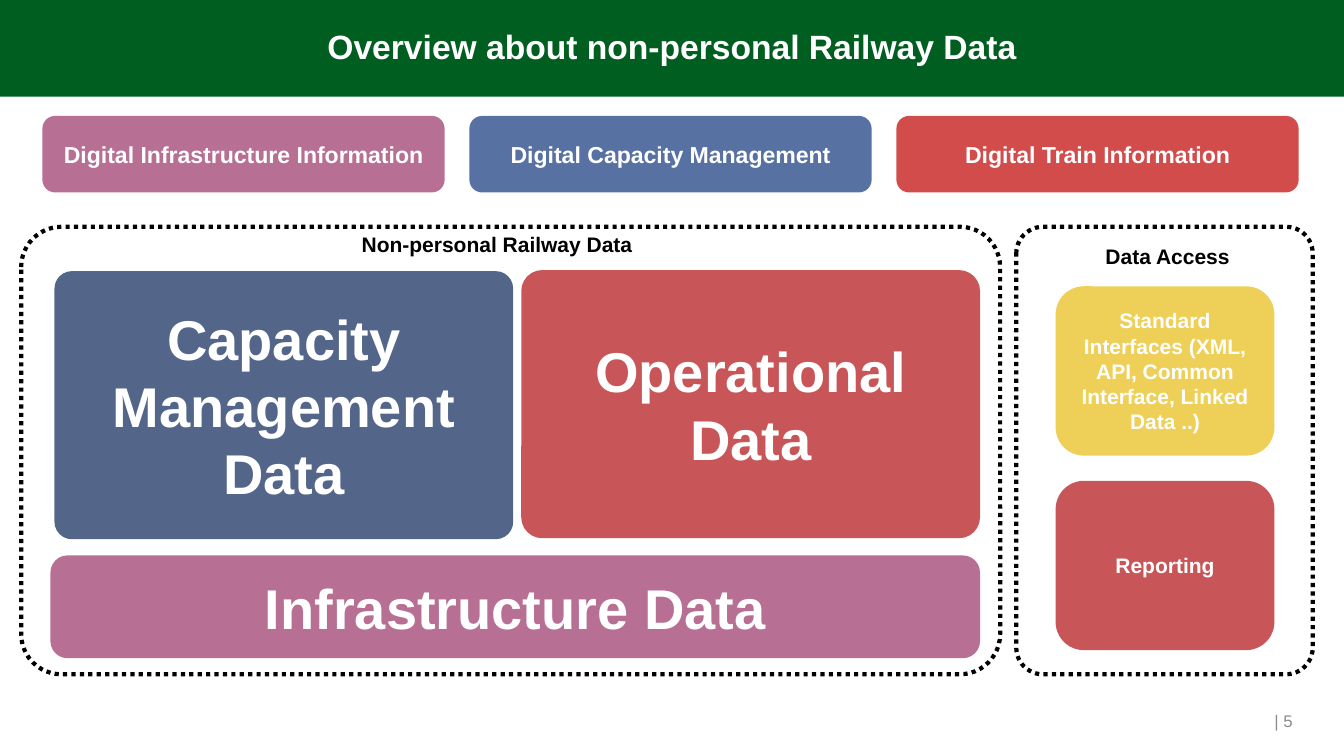
from dataclasses import dataclass

from lxml.etree import SubElement
from pptx import Presentation
from pptx.dml.color import RGBColor
from pptx.enum.dml import MSO_LINE
from pptx.enum.shapes import MSO_SHAPE
from pptx.enum.text import MSO_ANCHOR, MSO_AUTO_SIZE, PP_ALIGN
from pptx.oxml.ns import qn
from pptx.util import Inches, Pt


@dataclass(frozen=True)
class Theme:
    font: str = "Arial"
    banner: str = "005F20"
    white: str = "FFFFFF"
    black: str = "000000"
    grey: str = "8C8C8C"
    plum: str = "993366"
    blue: str = "10367D"
    navy: str = "0B2659"
    red: str = "C00000"
    crimson: str = "B20E10"
    yellow: str = "E8BC10"
    opacity: int = 70
    title: float = 24
    category: float = 16.5
    data: float = 40
    label: float = 15
    page: float = 12


T = Theme()

TITLE = "Overview about non-personal Railway Data"
PAGE = "| 5"
CATEGORIES = [
    ("Digital Infrastructure Information", T.plum),
    ("Digital Capacity Management", T.blue),
    ("Digital Train Information", T.red),
]
# text, colour, (left, top, width, height), corner ratio
DATA_BLOCKS = [
    ("Operational Data", T.crimson, (5.17, 2.68, 4.55, 2.66), 0.078),
    ("Capacity Management Data", T.navy, (0.54, 2.69, 4.55, 2.66), 0.065),
    ("Infrastructure Data", T.plum, (0.5, 5.51, 9.22, 1.02), 0.167),
]
ACCESS_BLOCKS = [
    ("Standard Interfaces (XML, API, Common Interface, Linked Data ..)", T.yellow),
    ("Reporting", T.crimson),
]
DATA_FRAME, DATA_LABEL = (0.21, 2.25, 9.71, 4.44), (3.01, 2.25, 3.84, 0.35)
ACCESS_FRAME, ACCESS_LABEL = (10.08, 2.25, 2.94, 4.44), (10.36, 2.37, 2.44, 0.35)


def rgb(code):
    return RGBColor.from_string(code)


def write(sp, text, size, color, bold=True, align=PP_ALIGN.CENTER,
          anchor=MSO_ANCHOR.MIDDLE):
    tf = sp.text_frame
    tf.text = text
    tf.word_wrap = True
    tf.auto_size = MSO_AUTO_SIZE.NONE
    tf.vertical_anchor = anchor
    p = tf.paragraphs[0]
    p.alignment = align
    font = p.runs[0].font
    font.name, font.size, font.bold = T.font, Pt(size), bold
    font.color.rgb = rgb(color)
    return p


def add_round_rect(shapes, box, corner):
    sp = shapes.add_shape(MSO_SHAPE.ROUNDED_RECTANGLE, *map(Inches, box))
    sp.adjustments[0] = corner
    sp.shadow.inherit = False
    return sp


def add_block(shapes, text, color, box, size, corner=0.167):
    """Add a translucent filled block with centred text."""
    sp = add_round_rect(shapes, box, corner)
    sp.fill.solid()
    sp.fill.fore_color.rgb = rgb(color)
    srgb = sp.fill._xPr.find(qn("a:solidFill")).find(qn("a:srgbClr"))
    SubElement(srgb, qn("a:alpha"), val=str(T.opacity * 1000))
    sp.line.fill.background()
    write(sp, text, size, T.white)


def add_frame(shapes, box, label, label_box):
    """Add a dotted frame and its heading."""
    sp = add_round_rect(shapes, box, 0.09)
    sp.fill.background()
    sp.line.color.rgb = rgb(T.black)
    sp.line.width = Pt(3)
    sp.line.dash_style = MSO_LINE.ROUND_DOT
    heading = shapes.add_textbox(*map(Inches, label_box))
    write(heading, label, T.label, T.black, anchor=MSO_ANCHOR.TOP)


def main():
    prs = Presentation()
    prs.slide_width, prs.slide_height = Inches(13.33), Inches(7.5)
    s = prs.slides.add_slide(prs.slide_layouts[5])

    title = s.shapes.title
    title.left, title.top = Inches(0), Inches(0)
    title.width, title.height = prs.slide_width, Inches(0.96)
    title.fill.solid()
    title.fill.fore_color.rgb = rgb(T.banner)
    write(title, TITLE, T.title, T.white).line_spacing = 0.9

    page = s.shapes.add_textbox(*map(Inches, (9.92, 6.95, 3, 0.4)))
    write(page, PAGE, T.page, T.grey, bold=False, align=PP_ALIGN.RIGHT)

    for i, (text, color) in enumerate(CATEGORIES):
        box = (0.42 + i * 4.235, 1.15, 3.99, 0.76)
        add_block(s.shapes, text, color, box, T.category)

    for text, color, box, corner in DATA_BLOCKS:
        add_block(s.shapes, text, color, box, T.data, corner)
    add_frame(s.shapes, DATA_FRAME, "Non-personal Railway Data", DATA_LABEL)

    access = s.shapes.add_group_shape().shapes
    for i, (text, color) in enumerate(ACCESS_BLOCKS):
        box = (10.47, 2.84 + i * 1.93, 2.17, 1.68)
        add_block(access, text, color, box, T.label)
    add_frame(access, ACCESS_FRAME, "Data Access", ACCESS_LABEL)

    prs.save("out.pptx")


if __name__ == "__main__":
    main()
